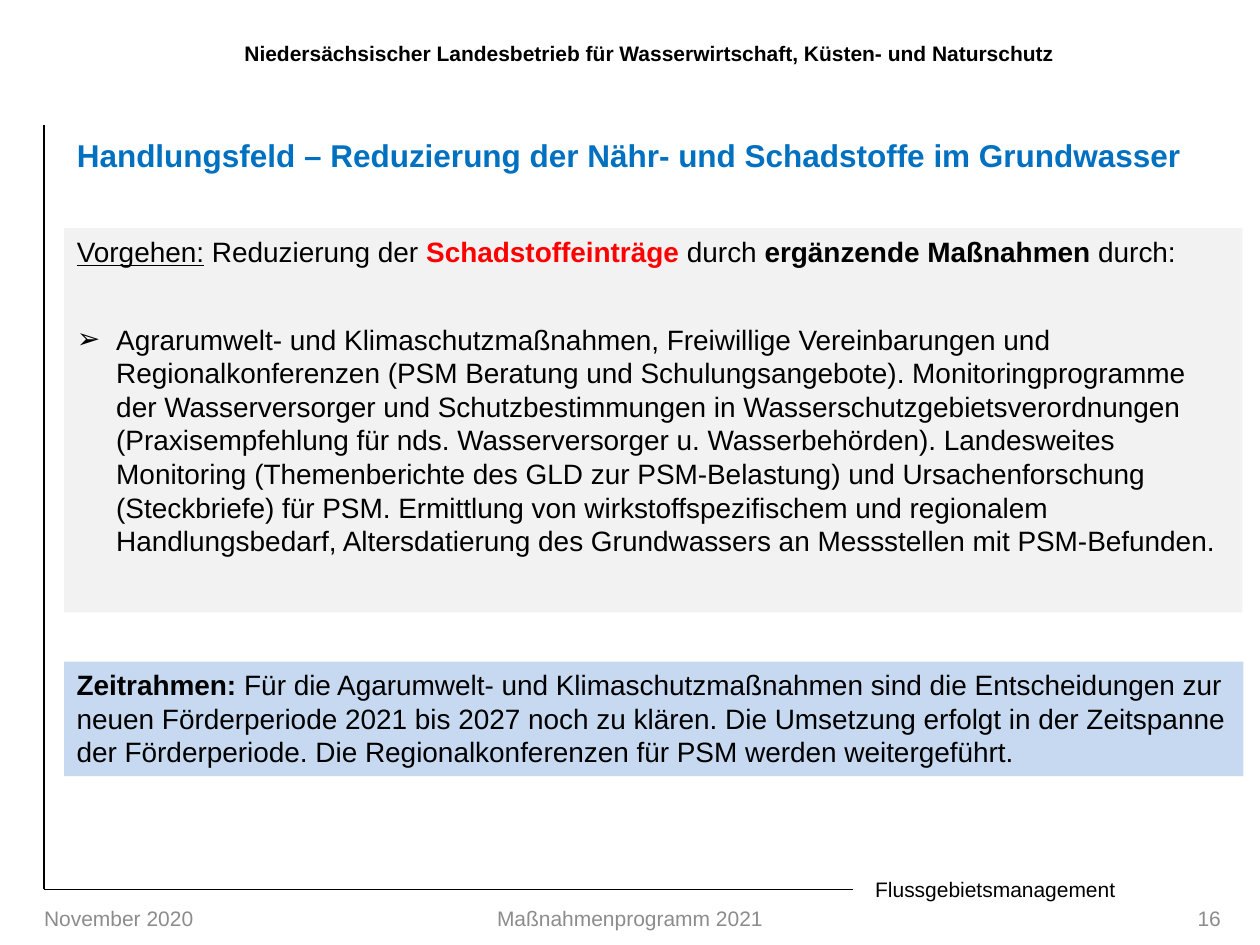
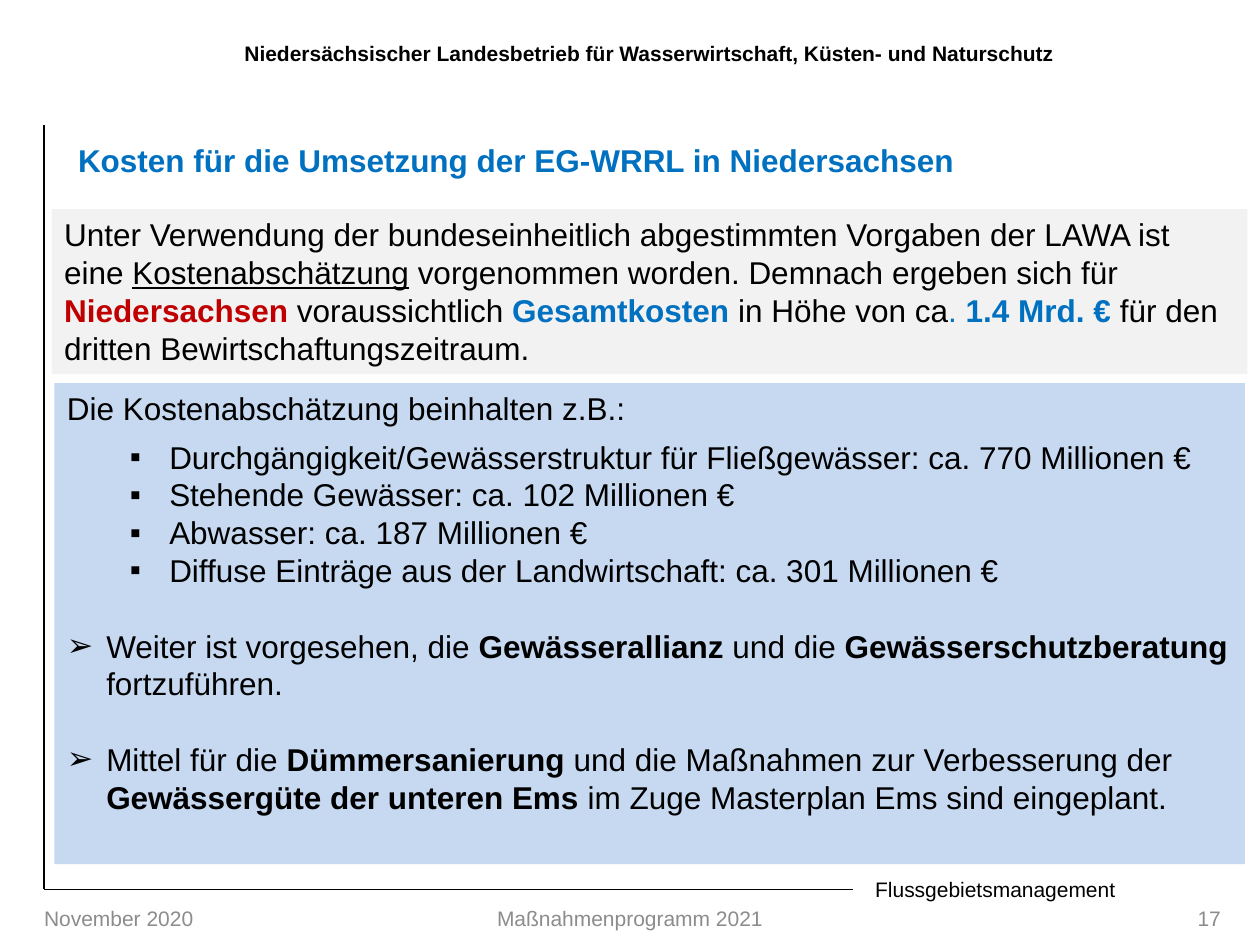
import pptx
import pptx.util
import pptx.dml.color
import pptx.enum.shapes
import pptx.enum.text
from pptx.oxml.ns import qn
from lxml import etree

Pt = pptx.util.Pt
ALIGN = pptx.enum.text.PP_ALIGN
ANCHOR = pptx.enum.text.MSO_ANCHOR
FONT = "Arial"
COLORS = {
    "text": "000000", "title": "0070C0", "footer": "8C8C8C", "red": "FF0000",
    "darkred": "C00000", "grey": "F2F2F2", "blue": "C6D9F1",
}
AGENCY = "Niedersächsischer Landesbetrieb für Wasserwirtschaft, Küsten- und Naturschutz"
BOLD = {"bold": True}
ACCENT = {"bold": True, "color": "title"}


def rgb(name):
    return pptx.dml.color.RGBColor.from_string(COLORS[name])


def add_run(p, text, size=12, color="text", bold=False, underline=False):
    r = p.add_run()
    r.text = text
    f = r.font
    f.name, f.size, f.bold, f.underline = FONT, Pt(size), bold, underline
    f.color.rgb = rgb(color)


def set_bullet(p, char, left):
    """Hang the paragraph at left behind a bullet, or remove its bullet."""
    pPr = p._p.get_or_add_pPr()
    pPr.set("marL", str(Pt(left)))
    pPr.set("indent", str(Pt(-22.5 if char else 0)))
    if char:
        etree.SubElement(pPr, qn("a:buFont")).set("typeface", FONT)
        etree.SubElement(pPr, qn("a:buChar")).set("char", char)
    else:
        etree.SubElement(pPr, qn("a:buNone"))


def para(*runs, **layout):
    """Pair text runs, plain or (text, format), with paragraph settings."""
    return [r if isinstance(r, tuple) else (r, {}) for r in runs], layout


class Deck:
    def __init__(self):
        self.prs = pptx.Presentation()
        self.prs.slide_width, self.prs.slide_height = Pt(720), Pt(540)
        self.s = None

    def fill_text(self, sp, paras, size, anchor=ANCHOR.TOP, align=ALIGN.LEFT, inset=7.2, **fmt):
        tf = sp.text_frame
        tf.word_wrap = True
        tf.auto_size = pptx.enum.text.MSO_AUTO_SIZE.NONE
        tf.vertical_anchor = anchor
        tf.margin_left = tf.margin_right = Pt(inset)
        tf.margin_top = tf.margin_bottom = Pt(3.6)
        for i, (runs, layout) in enumerate(paras):
            p = tf.add_paragraph() if i else tf.paragraphs[0]
            set_bullet(p, layout.get("bullet"), layout.get("left", 0))
            p.alignment = align
            p.space_before = Pt(layout.get("before", 0))
            p.space_after = Pt(layout.get("after", 0))
            for text, own in runs:
                add_run(p, text, size=size, **{**fmt, **own})

    def place(self, sp, box):
        sp.left, sp.top, sp.width, sp.height = map(Pt, box)

    def label(self, text, box, **fmt):
        sp = self.s.shapes.add_textbox(*map(Pt, box))
        self.fill_text(sp, [para(text)], 12, **fmt)

    def line(self, x1, y1, x2, y2):
        c = self.s.shapes.add_connector(
            pptx.enum.shapes.MSO_CONNECTOR.STRAIGHT, Pt(x1), Pt(y1), Pt(x2), Pt(y2))
        c.line.color.rgb = rgb("text")
        c.line.width = Pt(0.75)
        etree.SubElement(c._element.spPr, qn("a:effectLst"))

    def panel(self, box, fill, paras, size):
        sp = self.s.shapes.add_shape(pptx.enum.shapes.MSO_SHAPE.RECTANGLE, *map(Pt, box))
        sp.shadow.inherit = False
        sp.line.fill.background()
        self.fill_panel(sp, fill, paras, size)

    def body(self, box, fill, paras, size):
        sp = self.s.placeholders[1]
        self.place(sp, box)
        self.fill_panel(sp, fill, paras, size)

    def fill_panel(self, sp, fill, paras, size):
        sp.fill.solid()
        sp.fill.fore_color.rgb = rgb(fill)
        self.fill_text(sp, paras, size)

    def slide(self, title, left, top, number):
        """Start a slide with its title, frame lines, header and footer."""
        self.s = self.prs.slides.add_slide(self.prs.slide_layouts[1])
        sp = self.s.shapes.title
        self.place(sp, (left, top, 683.3, 28))
        self.fill_text(sp, [para(title)], 18, **ACCENT)
        self.line(487.4, 508.3, 25.2, 508.3)
        self.line(25.2, 508.3, 25.2, 71.3)
        self.label("Flussgebietsmanagement", (493, 497.5, 159, 21.6))
        self.label(AGENCY, (115.9, 15.1, 510.5, 31),
                   anchor=ANCHOR.MIDDLE, align=ALIGN.CENTER, bold=True)
        for text, x, width, align in (
                ("November 2020", 25.2, 144.7, ALIGN.LEFT),
                ("Maßnahmenprogramm 2021", 261.4, 197.3, ALIGN.CENTER),
                (str(number), 673.9, 23.8, ALIGN.RIGHT)):
            self.label(text, (x, 514.1, width, 21.6), anchor=ANCHOR.MIDDLE,
                       align=align, inset=0, color="footer")


def groundwater(d):
    d.slide("Handlungsfeld – Reduzierung der Nähr- und Schadstoffe im Grundwasser", 36.7, 74.2, 16)
    d.body((36.7, 130.3, 673.2, 219.6), "grey", [
        para(("Vorgehen:", {"underline": True}), " Reduzierung der ",
             ("Schadstoffeinträge", {"bold": True, "color": "red"}), " durch ",
             ("ergänzende Maßnahmen", BOLD), " durch:", after=31),
        para("Agrarumwelt- und Klimaschutzmaßnahmen, Freiwillige Vereinbarungen und "
             "Regionalkonferenzen (PSM Beratung und Schulungsangebote). Monitoringprogramme "
             "der Wasserversorger und Schutzbestimmungen in Wasserschutzgebietsverordnungen "
             "(Praxisempfehlung für nds. Wasserversorger u. Wasserbehörden). Landesweites "
             "Monitoring (Themenberichte des GLD zur PSM-Belastung) und Ursachenforschung "
             "(Steckbriefe) für PSM. Ermittlung von wirkstoffspezifischem und regionalem "
             "Handlungsbedarf, Altersdatierung des Grundwassers an Messstellen mit "
             "PSM-Befunden.", bullet="➢", left=22.5),
    ], 16)
    d.panel((36.7, 378, 673.9, 65.5), "blue", [
        para(("Zeitrahmen: ", BOLD),
             "Für die Agarumwelt- und Klimaschutzmaßnahmen sind die Entscheidungen zur neuen "
             "Förderperiode 2021 bis 2027 noch zu klären. Die Umsetzung erfolgt in der "
             "Zeitspanne der Förderperiode. Die Regionalkonferenzen für PSM werden "
             "weitergeführt."),
    ], 16)


def costs(d):
    d.slide("Kosten für die Umsetzung der EG-WRRL in Niedersachsen", 37.4, 77, 17)
    d.panel((29.5, 119.5, 683.3, 94.3), "grey", [
        para("Unter Verwendung der bundeseinheitlich abgestimmten Vorgaben der LAWA ist eine ",
             ("Kostenabschätzung", {"underline": True}),
             " vorgenommen worden. Demnach ergeben sich für ",
             ("Niedersachsen ", {"bold": True, "color": "darkred"}), "voraussichtlich ",
             ("Gesamtkosten ", ACCENT), "in Höhe von ca", (". ", {"color": "title"}),
             ("1.4 Mrd. € ", ACCENT), "für den dritten Bewirtschaftungszeitraum."),
    ], 18)
    items = (
        "Durchgängigkeit/Gewässerstruktur für Fließgewässer: ca. 770 Millionen €",
        "Stehende Gewässer: ca. 102 Millionen €",
        "Abwasser: ca. 187 Millionen €",
        "Diffuse Einträge aus der Landwirtschaft: ca. 301 Millionen €",
    )
    arrow = {"bullet": "➢", "left": 22.5, "before": 21.6}
    d.body((31, 218.9, 680.4, 275), "blue", [
        para("Die Kostenabschätzung beinhalten z.B.:", after=6),
        *(para(item, bullet="▪", left=58.5) for item in items),
        para("Weiter ist vorgesehen, die ", ("Gewässerallianz", BOLD), " und die ",
             ("Gewässerschutzberatung", BOLD), " fortzuführen.", **arrow),
        para("Mittel für die ", ("Dümmersanierung", BOLD),
             " und die Maßnahmen zur Verbesserung der ",
             ("Gewässergüte der unteren Ems ", BOLD),
             "im Zuge Masterplan Ems sind eingeplant.", **arrow),
    ], 18)


def main():
    d = Deck()
    groundwater(d)
    costs(d)
    d.prs.save("out.pptx")


if __name__ == "__main__":
    main()
